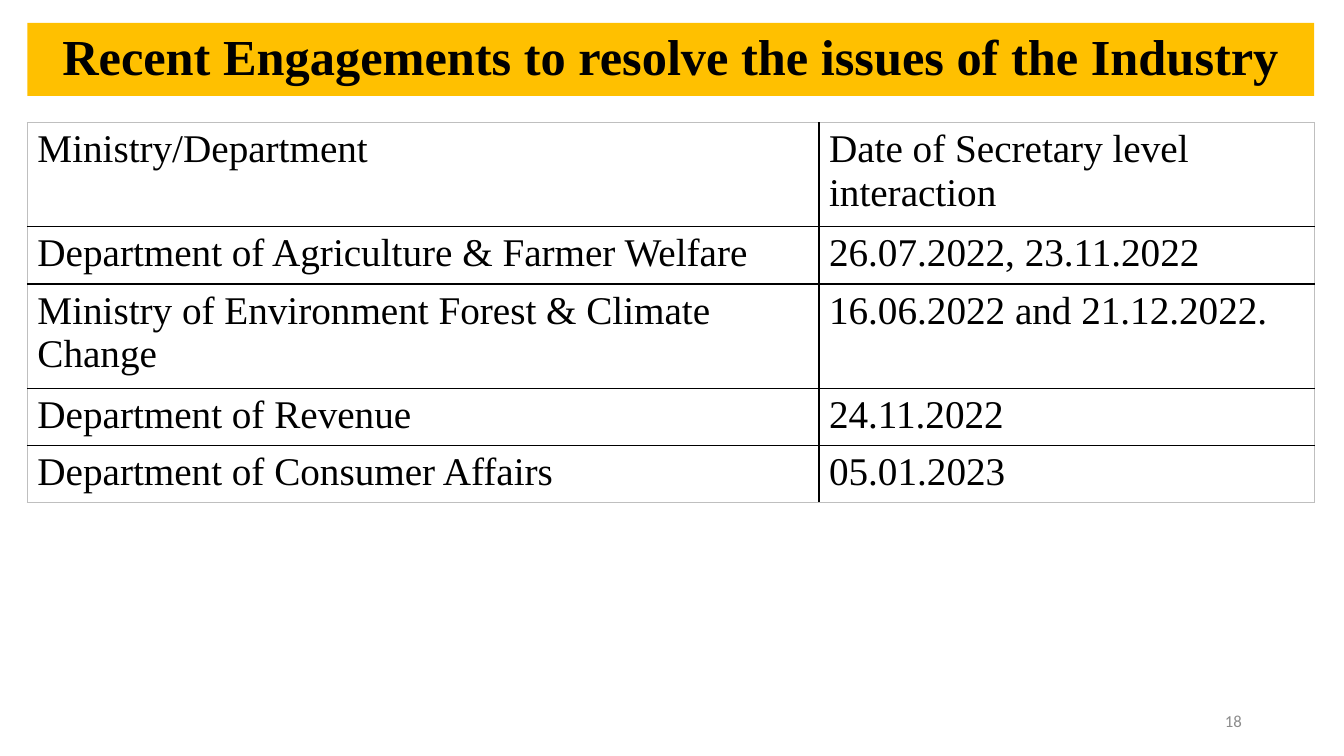
from dataclasses import dataclass

from lxml.etree import SubElement
from pptx import Presentation
from pptx.dml.color import RGBColor
from pptx.enum.shapes import MSO_SHAPE
from pptx.enum.text import MSO_ANCHOR, PP_ALIGN
from pptx.oxml.ns import qn
from pptx.slide import Slide
from pptx.table import _Cell
from pptx.text.text import TextFrame
from pptx.util import Cm, Pt

BLACK = RGBColor(0x00, 0x00, 0x00)
AMBER = RGBColor(0xFF, 0xC0, 0x00)
GREY = RGBColor(0x8C, 0x8C, 0x8C)
EDGE_GREY = RGBColor(0xBF, 0xBF, 0xBF)
SERIF = "Times New Roman"
SANS = "Calibri"

LEFT = Cm(0.69)
WIDTH = Cm(32.43)
COLUMN_WIDTHS = (Cm(19.95), Cm(12.48))
LINE_HEIGHT = Cm(1.1)
CELL_PADDING = Cm(0.25)


@dataclass(frozen=True)
class Engagement:
    ministry: str
    date: str
    lines: int = 1


ENGAGEMENTS = (
    Engagement("Ministry/Department", "Date of Secretary level interaction", 2),
    Engagement("Department of Agriculture & Farmer Welfare", "26.07.2022, 23.11.2022"),
    Engagement("Ministry of Environment Forest & Climate Change", "16.06.2022 and 21.12.2022.", 2),
    Engagement("Department of Revenue", "24.11.2022"),
    Engagement("Department of Consumer Affairs", "05.01.2023"),
)


def write(tf: TextFrame, text: str, font: str, size: int, color: RGBColor,
          align: PP_ALIGN = PP_ALIGN.LEFT, bold: bool = False) -> None:
    tf.word_wrap = True
    p = tf.paragraphs[0]
    p.text = text
    p.alignment = align
    p.font.name = font
    p.font.size = Pt(size)
    p.font.bold = bold
    p.font.color.rgb = color


def set_border(cell: _Cell, side: str, color: RGBColor) -> None:
    ln = SubElement(cell._tc.get_or_add_tcPr(), qn(f"a:{side}"), w=str(Pt(1)))
    fill = SubElement(ln, qn("a:solidFill"))
    SubElement(fill, qn("a:srgbClr"), val=str(color))


def add_title(s: Slide) -> None:
    sp = s.shapes.add_shape(MSO_SHAPE.RECTANGLE, LEFT, Cm(0.58), WIDTH, Cm(1.84))
    sp.shadow.inherit = False
    sp.fill.solid()
    sp.fill.fore_color.rgb = AMBER
    sp.line.fill.background()
    tf = sp.text_frame
    tf.vertical_anchor = MSO_ANCHOR.MIDDLE
    write(tf, "Recent Engagements to resolve the issues of the Industry",
          SERIF, 36, BLACK, PP_ALIGN.CENTER, True)
    tf.paragraphs[0].line_spacing = 0.9


def add_engagements(s: Slide) -> None:
    heights = [e.lines * LINE_HEIGHT + CELL_PADDING for e in ENGAGEMENTS]
    last_row, last_col = len(ENGAGEMENTS) - 1, len(COLUMN_WIDTHS) - 1
    table = s.shapes.add_table(last_row + 1, last_col + 1, LEFT, Cm(3.09),
                               WIDTH, sum(heights)).table
    table.first_row = False
    table.horz_banding = False
    for column, width in zip(table.columns, COLUMN_WIDTHS):
        column.width = width
    for i, (engagement, height) in enumerate(zip(ENGAGEMENTS, heights)):
        table.rows[i].height = height
        for j, text in enumerate((engagement.ministry, engagement.date)):
            cell = table.cell(i, j)
            outer = {"lnL": j == 0, "lnR": j == last_col,
                     "lnT": i == 0, "lnB": i == last_row}
            for side, is_outer in outer.items():
                set_border(cell, side, EDGE_GREY if is_outer else BLACK)
            cell.fill.background()
            write(cell.text_frame, text, SERIF, 28, BLACK)


def add_page_number(s: Slide) -> None:
    tf = s.shapes.add_textbox(Cm(23.93), Cm(17.65), Cm(7.62), Cm(1.02)).text_frame
    tf.vertical_anchor = MSO_ANCHOR.MIDDLE
    write(tf, "18", SANS, 12, GREY, PP_ALIGN.RIGHT)


def main() -> None:
    prs = Presentation()
    prs.slide_width = Cm(33.87)
    prs.slide_height = Cm(19.05)
    s = prs.slides.add_slide(prs.slide_layouts[6])
    add_title(s)
    add_page_number(s)
    add_engagements(s)
    prs.save("out.pptx")


if __name__ == "__main__":
    main()
